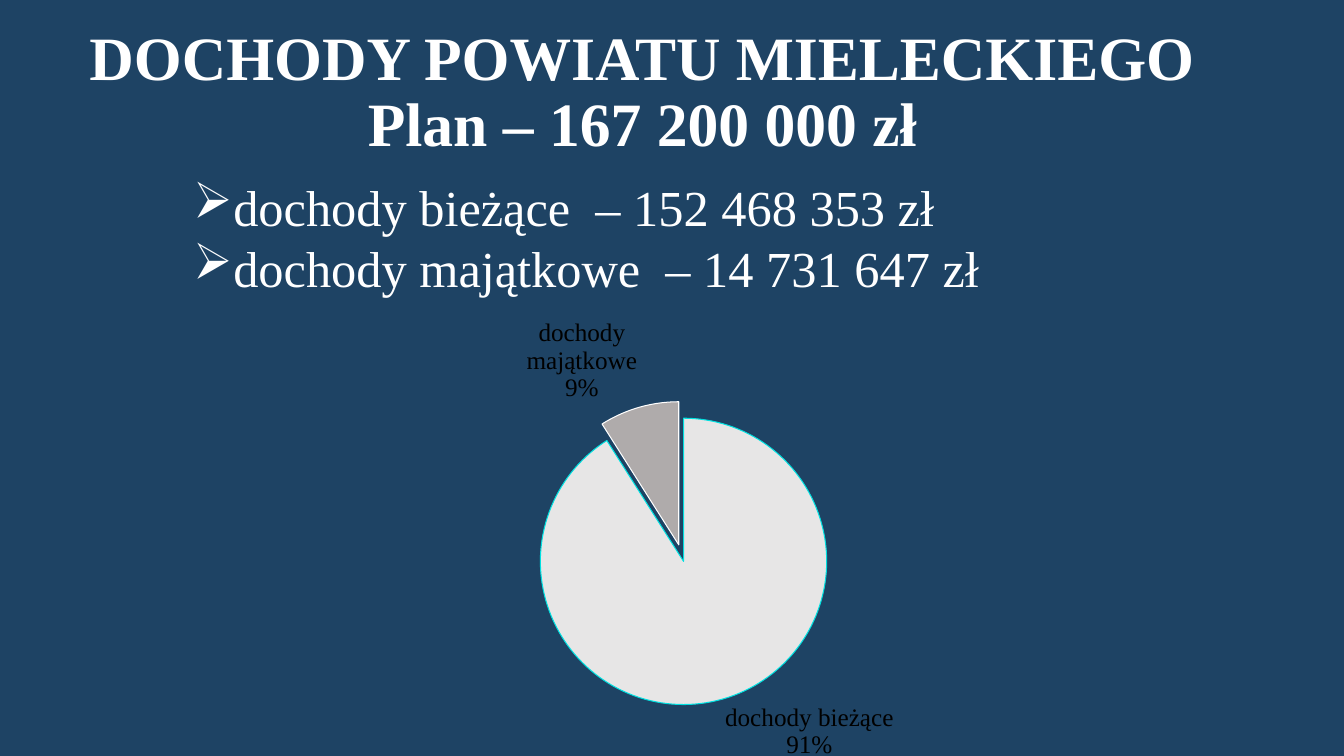
from dataclasses import dataclass

from lxml import etree
from pptx import Presentation
from pptx import util as u
from pptx.chart.data import CategoryChartData
from pptx.dml.color import RGBColor
from pptx.enum import chart as ch, text
from pptx.oxml import ns


@dataclass
class Theme:
    back: str = "1E4364"
    ink: str = "FFFFFF"
    label: str = "000000"
    slices: tuple = ("E7E6E6", "AFABAB")
    edges: tuple = ("00E0E0", "FFFFFF")
    face: str = "Times New Roman"
    head: int = 44
    body: int = 36
    small: int = 18


def put(item, **vals):
    for key, val in vals.items():
        setattr(item, key, val)


def box(left, top, width, height):
    names = ("left", "top", "width", "height")
    return dict(zip(names, map(u.Cm, (left, top, width, height))))


class Deck:
    def __init__(self, theme):
        self.theme = theme
        self.prs = Presentation()
        put(self.prs, slide_width=u.Cm(33.87), slide_height=u.Cm(19.05))
        self.slide = self.prs.slides.add_slide(self.prs.slide_layouts[5])
        self.fill(self.slide.background.fill, theme.back)

    def fill(self, fill, color):
        fill.solid()
        fill.fore_color.rgb = RGBColor.from_string(color)

    def font(self, font, size, color, bold=False):
        put(font, name=self.theme.face, size=u.Pt(size), bold=bold)
        font.color.rgb = RGBColor.from_string(color)

    def title(self, words, area):
        shape = self.slide.shapes.title
        put(shape, **area)
        frame = shape.text_frame
        put(frame, text=words, word_wrap=True,
            auto_size=text.MSO_AUTO_SIZE.NONE,
            vertical_anchor=text.MSO_ANCHOR.TOP)
        for para in frame.paragraphs:
            put(para, alignment=text.PP_ALIGN.CENTER, line_spacing=0.9)
            self.font(para.font, self.theme.head, self.theme.ink, True)
            for run in para.runs:
                self.font(run.font, self.theme.head, self.theme.ink, True)

    def bullets(self, lines, area):
        frame = self.slide.shapes.add_textbox(*area.values()).text_frame
        put(frame, text="\n".join(lines), word_wrap=True)
        for para in frame.paragraphs:
            self.font(para.runs[0].font, self.theme.body, self.theme.ink)
            props = para._p.get_or_add_pPr()
            indent = u.Cm(0.95)
            props.set("marL", str(indent))
            props.set("indent", str(-indent))
            etree.SubElement(props, ns.qn("a:buChar")).set("char", "➢")

    def pie(self, parts, area, burst):
        data = CategoryChartData()
        data.categories = list(parts)
        data.add_series("Series 1", parts.values())
        chart = self.slide.shapes.add_chart(
            ch.XL_CHART_TYPE.PIE, *area.values(), data).chart
        put(chart, has_legend=False, has_title=False)
        self.font(chart.font, self.theme.small, self.theme.label)
        plot = chart.plots[0]
        put(plot, vary_by_categories=True, has_data_labels=True)
        labels = plot.data_labels
        put(labels, show_category_name=True, show_percentage=True,
            show_value=False, number_format="0%",
            number_format_is_linked=False,
            position=ch.XL_LABEL_POSITION.OUTSIDE_END)
        self.font(labels.font, self.theme.small, self.theme.label)
        series = plot.series[0]
        for spot, color in enumerate(self.theme.slices):
            form = series.points[spot].format
            self.fill(form.fill, color)
            self.fill(form.line.fill, self.theme.edges[spot])
            form.line.width = u.Pt(0.75)
        small = series.points[1].format.fill._xPr.getparent()
        blast = etree.Element(ns.qn("c:explosion"), val=str(burst))
        small.find(ns.qn("c:spPr")).addprevious(blast)


def main():
    deck = Deck(Theme())
    deck.title("DOCHODY POWIATU MIELECKIEGO\vPlan – 167 200 000 zł",
               box(0, 0.56, 32.39, 2.69))
    deck.bullets(["dochody bieżące  – 152 468 353 zł",
                  "dochody majątkowe  – 14 731 647 zł"],
                 box(4.62, 4.32, 20.5, 3.33))
    deck.pie({"dochody bieżące": 91, "dochody majątkowe": 9},
             box(5.46, 7.65, 24.92, 12.04), 12)
    deck.prs.save("out.pptx")


if __name__ == "__main__":
    main()
